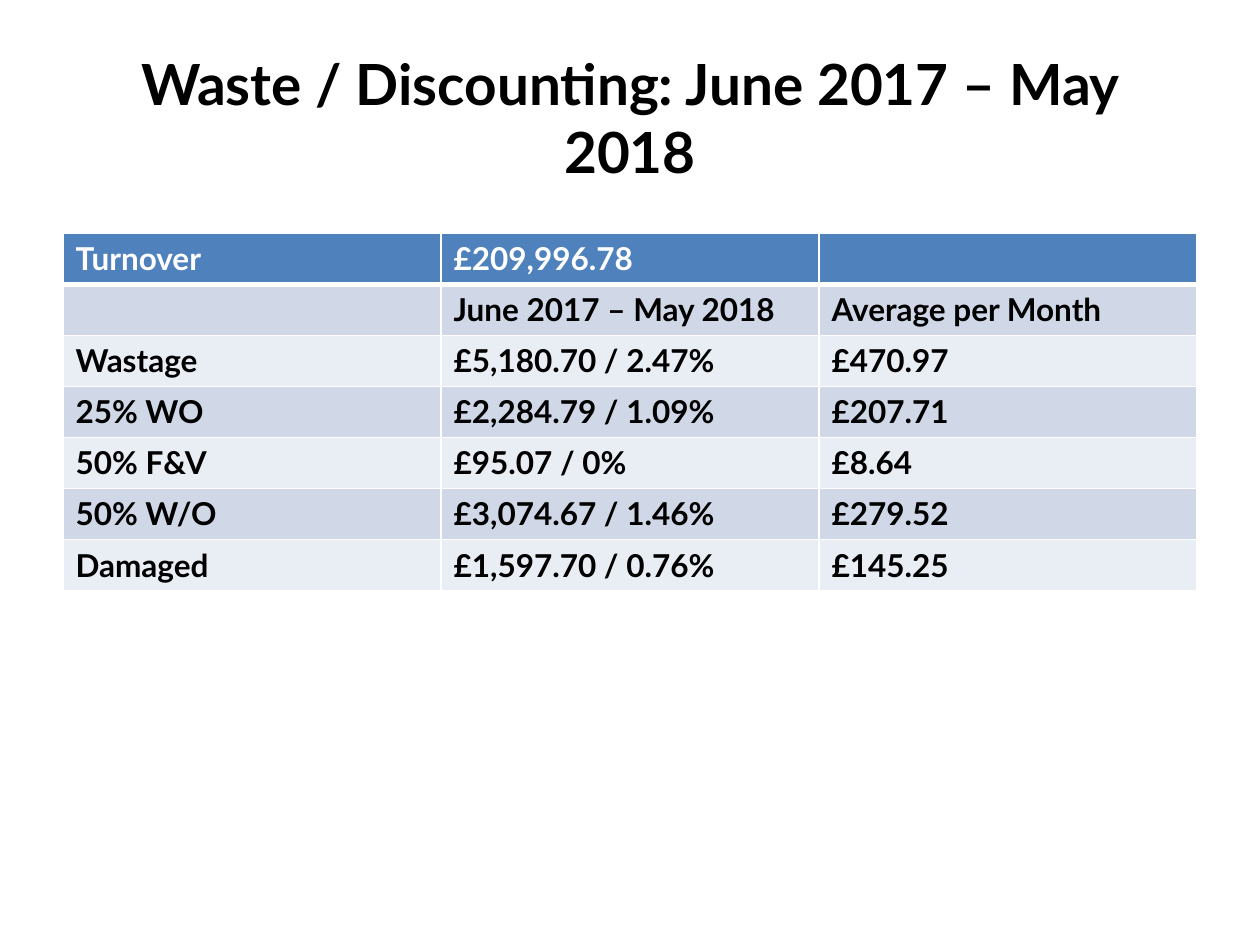
"""Build the waste and discounting summary slide."""
from dataclasses import dataclass

from lxml.etree import SubElement
from pptx import Presentation
from pptx.dml.color import RGBColor
from pptx.enum.text import MSO_ANCHOR, PP_ALIGN
from pptx.oxml.ns import qn
from pptx.slide import Slide
from pptx.table import _Cell
from pptx.text.text import _Paragraph
from pptx.util import Pt


@dataclass(frozen=True)
class Theme:
    font: str = "Lato"
    title_size: float = 32.4
    table_size: float = 18
    ink: str = "000000"
    paper: str = "FFFFFF"
    header: str = "4F81BD"
    bands: tuple[str, str] = ("E9EDF4", "D0D8E8")
    rule: float = 1
    header_rule: float = 3


@dataclass(frozen=True)
class Box:
    left: float
    top: float
    width: float
    height: float

    def lengths(self) -> tuple[Pt, Pt, Pt, Pt]:
        return Pt(self.left), Pt(self.top), Pt(self.width), Pt(self.height)


@dataclass(frozen=True)
class Entry:
    label: str
    total: str
    average: str

    def texts(self) -> tuple[str, str, str]:
        return self.label, self.total, self.average


THEME = Theme()
TITLE = "Waste / Discounting: June 2017 – May 2018"
TITLE_BOX = Box(36, 21.6, 648, 90)
TABLE_BOX = Box(36, 133.2, 648, 204.4)
ENTRIES = (
    Entry("Turnover", "£209,996.78", ""),
    Entry("", "June 2017 – May 2018", "Average per Month"),
    Entry("Wastage", "£5,180.70 / 2.47%", "£470.97"),
    Entry("25% WO", "£2,284.79 / 1.09%", "£207.71"),
    Entry("50% F&V", "£95.07 / 0%", "£8.64"),
    Entry("50% W/O", "£3,074.67 / 1.46%", "£279.52"),
    Entry("Damaged", "£1,597.70 / 0.76%", "£145.25"),
)


def style(paragraph: _Paragraph, size: float, color: str) -> None:
    font = paragraph.font
    font.name, font.size, font.bold = THEME.font, Pt(size), True
    font.color.rgb = RGBColor.from_string(color)


def add_title(slide: Slide) -> None:
    frame = slide.shapes.add_textbox(*TITLE_BOX.lengths()).text_frame
    frame.word_wrap = True
    frame.vertical_anchor = MSO_ANCHOR.MIDDLE
    heading = frame.paragraphs[0]
    heading.text = TITLE
    heading.alignment = PP_ALIGN.CENTER
    style(heading, THEME.title_size, THEME.ink)


def set_borders(cell: _Cell, top: float, bottom: float) -> None:
    properties = cell._tc.get_or_add_tcPr()
    widths = {"a:lnL": THEME.rule, "a:lnR": THEME.rule, "a:lnT": top, "a:lnB": bottom}
    for side, width in widths.items():
        border = SubElement(properties, qn(side), w=str(Pt(width)))
        SubElement(SubElement(border, qn("a:solidFill")), qn("a:srgbClr"), val=THEME.paper)


def fill_cell(cell: _Cell, text: str, row: int) -> None:
    is_header = row == 0
    set_borders(
        cell,
        THEME.header_rule if row == 1 else THEME.rule,
        THEME.header_rule if is_header else THEME.rule,
    )
    cell.fill.solid()
    cell.fill.fore_color.rgb = RGBColor.from_string(
        THEME.header if is_header else THEME.bands[row % 2]
    )
    cell.text = text
    style(
        cell.text_frame.paragraphs[0],
        THEME.table_size,
        THEME.paper if is_header else THEME.ink,
    )


def add_waste_table(slide: Slide) -> None:
    table = slide.shapes.add_table(len(ENTRIES), 3, *TABLE_BOX.lengths()).table
    for row, entry in enumerate(ENTRIES):
        table.rows[row].height = Pt(TABLE_BOX.height / len(ENTRIES))
        for column, text in enumerate(entry.texts()):
            fill_cell(table.cell(row, column), text, row)


def main() -> None:
    presentation = Presentation()
    presentation.slide_width, presentation.slide_height = Pt(720), Pt(540)
    slide = presentation.slides.add_slide(presentation.slide_layouts[6])
    add_title(slide)
    add_waste_table(slide)
    presentation.save("out.pptx")


if __name__ == "__main__":
    main()
